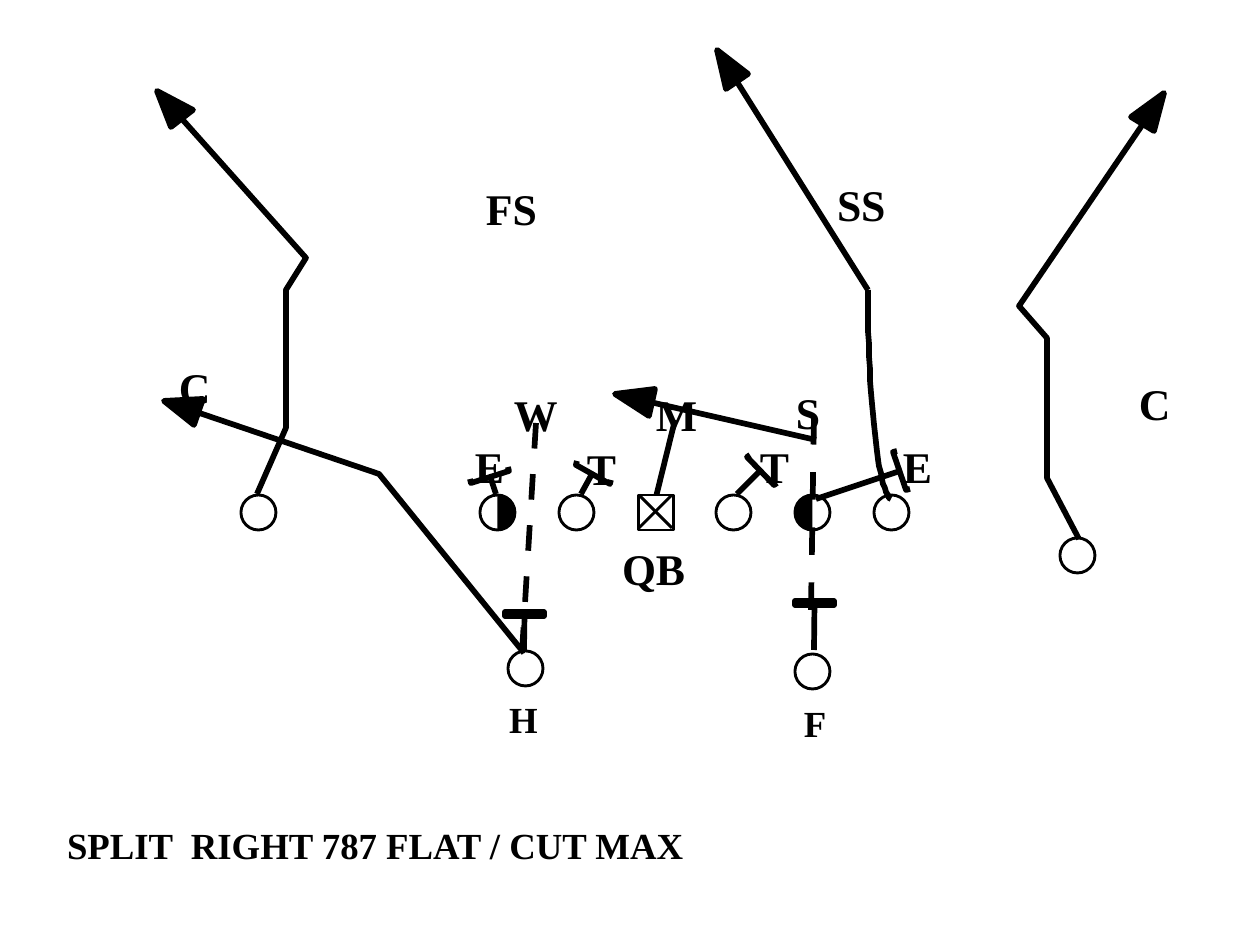
from dataclasses import dataclass
from itertools import pairwise

from lxml.etree import SubElement
from pptx import Presentation
from pptx.dml.color import RGBColor
from pptx.enum.shapes import MSO_CONNECTOR, MSO_SHAPE
from pptx.enum.text import MSO_ANCHOR, MSO_AUTO_SIZE, PP_ALIGN
from pptx.oxml.ns import qn
from pptx.util import Emu, Pt

SCALE = 914400 / 126
DISC = 35


@dataclass(frozen=True)
class Theme:
    ink: RGBColor = RGBColor(0, 0, 0)
    paper: RGBColor = RGBColor(255, 255, 255)
    font: str = "Times New Roman"
    small: float = 21
    large: float = 25
    thin: float = 1.63
    thick: float = 3.25


THEME = Theme()

LABELS = [
    ("E", 475, 436, 48), ("T", 587, 438, 48), ("T", 760, 436, 48), ("E", 903, 436, 48),
    ("W", 514, 384, 63), ("M", 656, 384, 60), ("S", 796, 382, 43), ("QB", 622, 538, 82),
    ("C", 179, 357, 50), ("C", 1139, 373, 50), ("FS", 486, 178, 69), ("SS", 837, 174, 67),
]
BACKS = [("H", 509, 694, 44), ("F", 804, 698, 38)]
DISCS = [
    (241, 495), (480, 495), (559, 495), (716, 495), (795, 495), (874, 495),
    (1060, 538), (508, 651), (795, 654),
]
HALVES = [(480, 495, (162, 54)), (795, 495, (54, 162))]
BLOCKS = [
    ((816, 499), (900, 471), [(910, 489), (906, 490), (893, 452), (897, 451)]),
    ((737, 494), (760, 471), [(777, 483), (774, 485), (747, 457), (750, 455)]),
    ((581, 494), (592, 474), [(611, 480), (610, 484), (576, 465), (577, 461)]),
    ((496, 494), (490, 476), [(508, 467), (509, 471), (471, 483), (470, 479)]),
]
STEMS = [(505, 612, (524, 650)), (795, 601, (814, 650))]
ROUTES = [
    ([(257, 494), (286, 428), (286, 290), (306, 258), (157, 91)], [(171, 127), (193, 110)]),
    ([(1079, 539), (1047, 478), (1047, 338), (1019, 306), (1164, 93)], [(1131, 117), (1154, 131)]),
    ([(868, 290), (717, 50)], [(726, 89), (748, 74)]),
    ([(524, 653), (379, 474), (164, 401)], [(194, 425), (203, 399)]),
    ([(816, 440), (615, 394)], [(649, 416), (655, 389)]),
]
CURVE = [(891, 499), (878, 491), (868, 401), (868, 290)]
DASHES = [((536, 423), (522, 653), 5), ((814, 417), (811, 610), 4)]


def px(*nums):
    return [Emu(round(num * SCALE)) for num in nums]


def style(shape, fill=None, width=None):
    shape.shadow.inherit = False
    if fill is None:
        shape.fill.background()
    else:
        shape.fill.solid()
        shape.fill.fore_color.rgb = fill
    if width is None:
        shape.line.fill.background()
    else:
        shape.line.color.rgb = THEME.ink
        shape.line.width = Pt(width)
    return shape


def write(shape, text, size, bold=True):
    frame = shape.text_frame
    frame.margin_left = frame.margin_right = frame.margin_top = frame.margin_bottom = 0
    frame.word_wrap = True
    frame.auto_size = MSO_AUTO_SIZE.NONE
    frame.vertical_anchor = MSO_ANCHOR.MIDDLE
    para = frame.paragraphs[0]
    para.alignment = PP_ALIGN.LEFT
    run = para.add_run()
    run.text = text
    run.font.name = THEME.font
    run.font.size = Pt(size)
    run.font.bold = bold
    run.font.color.rgb = THEME.ink


def label(slide, text, x, y, wide, high, size):
    write(slide.shapes.add_textbox(*px(x, y, wide, high)), text, size=size)


def block(slide, kind, x, y, wide, high, **look):
    return style(slide.shapes.add_shape(kind, *px(x, y, wide, high)), **look)


def line(slide, start, end, width=THEME.thick):
    link = slide.shapes.add_connector(MSO_CONNECTOR.STRAIGHT, *px(*start, *end))
    link.line.color.rgb = THEME.ink
    link.line.width = Pt(width)
    SubElement(link._element.spPr, qn("a:effectLst"))
    return link


def outline(slide, points, fill=None, close=False):
    first, *rest = points
    pen = slide.shapes.build_freeform(*first, scale=SCALE)
    pen.add_line_segments(rest, close=close)
    return style(pen.convert_to_shape(), fill=fill, width=THEME.thick)


def route(slide, points, wings):
    if len(points) == 2:
        line(slide, *points)
    else:
        outline(slide, points)
    outline(slide, [points[-1], *wings], fill=THEME.ink, close=True)


def bend(slide, knots, steps=24):
    def at(part):
        rest = 1 - part
        weights = (rest**3, 3 * rest**2 * part, 3 * rest * part**2, part**3)
        return tuple(sum(w * k for w, k in zip(weights, axis)) for axis in zip(*knots))

    outline(slide, [at(step / steps) for step in range(steps + 1)])


def dash(slide, start, end, count):
    units = 2 * count - 1
    marks = [
        tuple(a + (b - a) * i / units for a, b in zip(start, end))
        for i in range(units + 1)
    ]
    for head, tail in list(pairwise(marks))[::2]:
        line(slide, head, tail)


def center(slide):
    x, y, size = 639, 495, 33
    box = block(slide, MSO_SHAPE.RECTANGLE, x, y, DISC, DISC, fill=THEME.paper, width=THEME.thin)
    line(slide, (x, y), (x + size, y + size), width=THEME.thin)
    line(slide, (x, y + size), (x + size, y), width=THEME.thin)
    line(slide, (675, 420), (657, y)).end_connect(box, 0)


def stem(slide, x, y, foot):
    bar = block(slide, MSO_SHAPE.RECTANGLE, x, y, 39, 4, fill=THEME.ink, width=THEME.thick)
    line(slide, foot, (foot[0], y + 4)).end_connect(bar, 2)


def main():
    deck = Presentation()
    deck.slide_width, deck.slide_height = px(1260, 945)
    slide = deck.slides.add_slide(deck.slide_layouts[5])
    title = slide.shapes.title
    title.left, title.top, title.width, title.height = px(67, 823, 631, 44)
    write(title, "SPLIT  RIGHT 787 FLAT / CUT MAX", size=THEME.small)

    for text, x, y, wide in LABELS:
        label(slide, text, x, y, wide, 59, THEME.large)
    for text, x, y, wide in BACKS:
        label(slide, text, x, y, wide, 49, THEME.small)
    for x, y in DISCS:
        block(slide, MSO_SHAPE.OVAL, x, y, DISC, DISC, fill=THEME.paper, width=THEME.thin)
    for x, y, angles in HALVES:
        half = block(slide, MSO_SHAPE.CHORD, x, y, DISC, DISC, fill=THEME.ink)
        half.adjustments[0], half.adjustments[1] = angles
    center(slide)
    for start, end, bar in BLOCKS:
        line(slide, start, end)
        outline(slide, bar)
    for x, y, foot in STEMS:
        stem(slide, x, y, foot)
    bend(slide, CURVE)
    for points, wings in ROUTES:
        route(slide, points, wings)
    for start, end, count in DASHES:
        dash(slide, start, end, count)
    deck.save("out.pptx")


if __name__ == "__main__":
    main()
